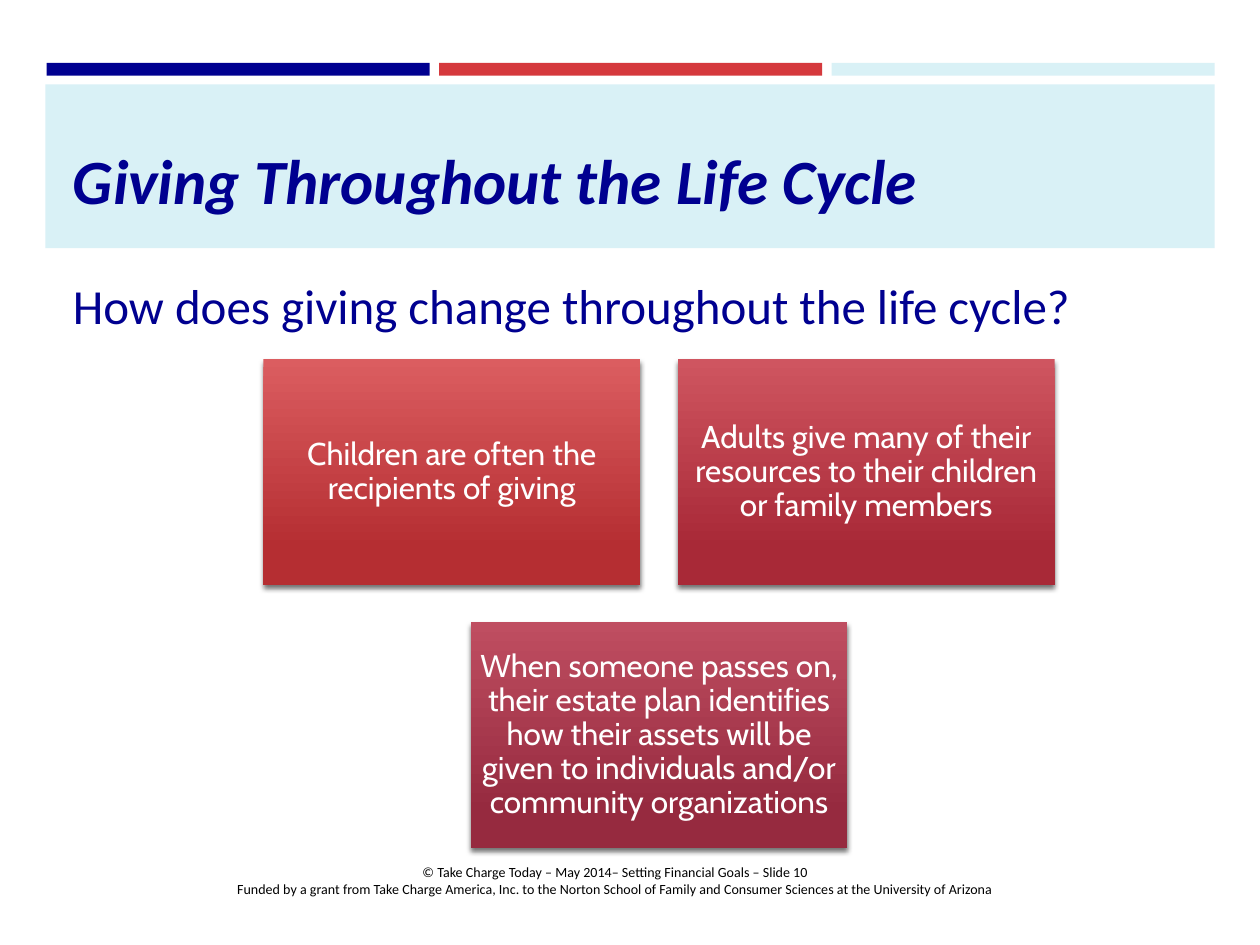
import pptx
import pptx.dml.color
import pptx.enum.shapes
import pptx.enum.text
import pptx.oxml
import pptx.oxml.ns
import pptx.util
from dataclasses import dataclass

Inches, Pt = pptx.util.Inches, pptx.util.Pt
RGB = pptx.dml.color.RGBColor.from_string
ALIGN, ANCHOR = pptx.enum.text.PP_ALIGN, pptx.enum.text.MSO_ANCHOR


@dataclass(frozen=True)
class Theme:
    navy: str = "000090"
    red: str = "D5393D"
    pale: str = "D9F1F6"
    black: str = "000000"
    white: str = "FFFFFF"
    main_font: str = "Calibri"
    card_font: str = "Cabin"
    title_size: int = 36
    question_size: int = 28
    card_size: int = 18
    footer_size: int = 8


THEME = Theme()

# Content
TITLE = "Giving Throughout the Life Cycle"
QUESTION = "How does giving change throughout the life cycle?"
STAGE_ROWS = [  # each stage: text, gradient top, gradient bottom
    [
        ("Children are often the recipients of giving", "DB5D60", "B52E32"),
        ("Adults give many of their resources to their children or family members",
         "CF5560", "A82937"),
    ],
    [
        ("When someone passes on, their estate plan identifies how their assets will be "
         "given to individuals and/or community organizations", "BF4E61", "962A3F"),
    ],
]
FOOTER = [
    "© Take Charge Today – May 2014– Setting Financial Goals – Slide 10",
    "Funded by a grant from Take Charge America, Inc. to the Norton School of Family "
    "and Consumer Sciences at the University of Arizona",
]

# Layout, in inches
BAR_LEFT, BAR_RIGHT, BAR_TOP, BAR_W, BAR_H = 0.37, 9.64, 0.5, 3.04, 0.1
CARD_CENTER, CARD_TOP, CARD_W, CARD_H, CARD_GAP = 5.23, 2.85, 2.99, 1.79, 0.3
CARD_INSET = 0.07

SHADOW = (
    '<a:effectLst %s><a:outerShdw blurRad="38100" dist="25400" dir="5400000" '
    'rotWithShape="0"><a:srgbClr val="000000"><a:alpha val="55000"/></a:srgbClr>'
    "</a:outerShdw></a:effectLst>" % pptx.oxml.ns.nsdecls("a")
)


def add_rect(slide, box, color=None):
    rect = slide.shapes.add_shape(
        pptx.enum.shapes.MSO_SHAPE.RECTANGLE, *map(Inches, box))
    rect.line.fill.background()
    if color:
        rect.shadow.inherit = False
        rect.fill.solid()
        rect.fill.fore_color.rgb = RGB(color)
    return rect


def write(frame, lines, font, size, color, align=ALIGN.LEFT, anchor=ANCHOR.TOP,
          wrap=True, emphasis=False):
    frame.text = "\n".join(lines)
    frame.word_wrap = wrap
    frame.vertical_anchor = anchor
    for paragraph in frame.paragraphs:
        paragraph.alignment = align
        for run in paragraph.runs:
            run.font.name = font
            run.font.size = Pt(size)
            run.font.color.rgb = RGB(color)
            run.font.bold = run.font.italic = emphasis


def add_text(slide, box, lines, size, color, **options):
    frame = slide.shapes.add_textbox(*map(Inches, box)).text_frame
    write(frame, lines, THEME.main_font, size, color, **options)


def add_card(slide, left, top, text, light, dark):
    card = add_rect(slide, (left, top, CARD_W, CARD_H))
    card.fill.gradient()
    card.fill.gradient_angle = 270  # light at the top, dark at the bottom
    for stop, position, color in zip(card.fill.gradient_stops, (0, 0.84), (light, dark)):
        stop.position = position
        stop.color.rgb = RGB(color)
    card._element.spPr.append(pptx.oxml.parse_xml(SHADOW))

    frame = card.text_frame
    frame.margin_left = frame.margin_right = Inches(CARD_INSET)
    frame.margin_top = frame.margin_bottom = Inches(CARD_INSET)
    write(frame, [text], THEME.card_font, THEME.card_size, THEME.white,
          align=ALIGN.CENTER, anchor=ANCHOR.MIDDLE)
    frame.paragraphs[0].line_spacing = 0.9


def main():
    deck = pptx.Presentation()
    deck.slide_width, deck.slide_height = Inches(10), Inches(7.5)
    slide = deck.slides.add_slide(deck.slide_layouts[6])

    # Color bars across the top
    bar_colors = (THEME.navy, THEME.red, THEME.pale)
    bar_step = (BAR_RIGHT - BAR_LEFT - BAR_W) / (len(bar_colors) - 1)
    for i, color in enumerate(bar_colors):
        add_rect(slide, (BAR_LEFT + i * bar_step, BAR_TOP, BAR_W, BAR_H), color)

    # Footer
    add_text(slide, (1.75, 6.8, 6.27, 0.37), FOOTER, THEME.footer_size, THEME.black,
             align=ALIGN.CENTER, anchor=ANCHOR.MIDDLE, wrap=False)

    # Title band and title
    add_rect(slide, (0.36, 0.67, 9.28, 1.3), THEME.pale)
    add_text(slide, (0.48, 0.77, 9.05, 1), [TITLE], THEME.title_size, THEME.navy,
             anchor=ANCHOR.BOTTOM, emphasis=True)

    # Life stage cards, each row centered
    for row, stages in enumerate(STAGE_ROWS):
        row_width = len(stages) * (CARD_W + CARD_GAP) - CARD_GAP
        top = CARD_TOP + row * (CARD_H + CARD_GAP)
        for column, stage in enumerate(stages):
            left = CARD_CENTER - row_width / 2 + column * (CARD_W + CARD_GAP)
            add_card(slide, left, top, *stage)

    # Question
    add_text(slide, (0.48, 2.14, 9.05, 0.9), [QUESTION], THEME.question_size, THEME.navy)

    deck.save("out.pptx")


if __name__ == "__main__":
    main()
